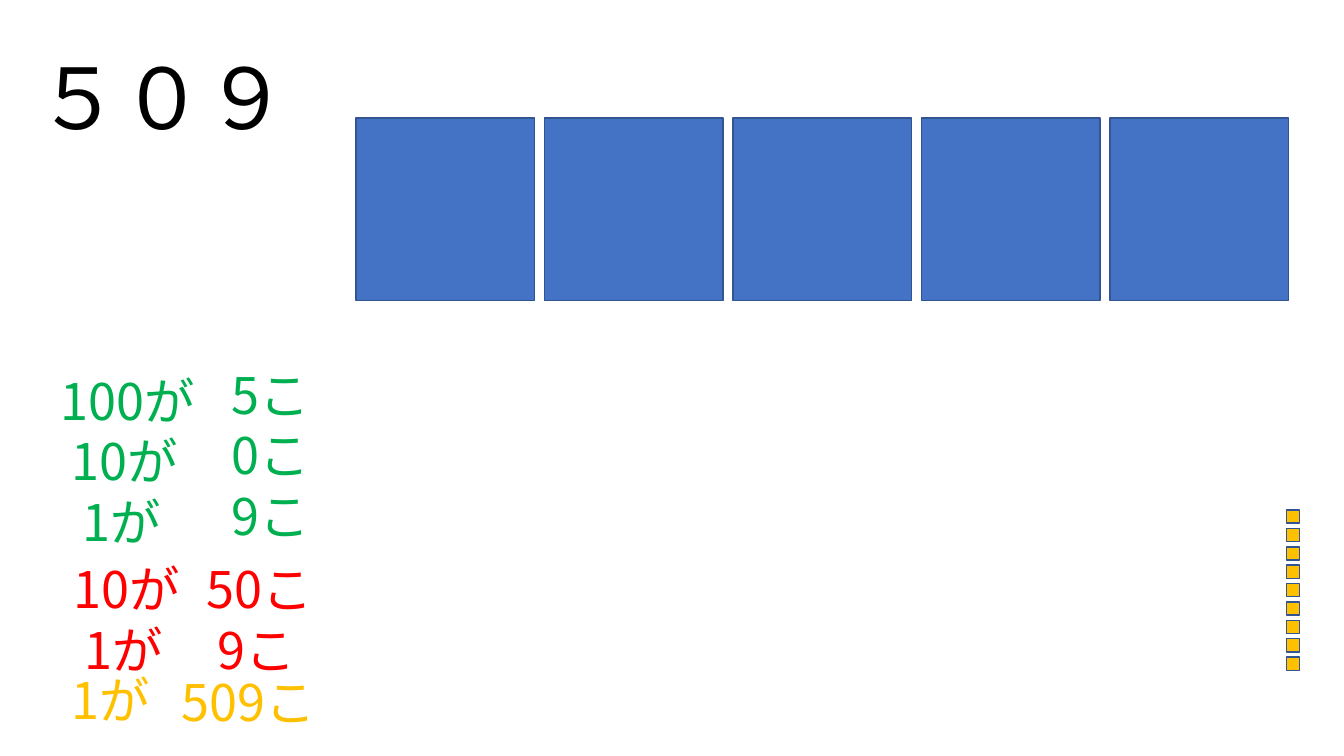
from dataclasses import dataclass

from lxml.etree import SubElement
from pptx import Presentation
from pptx.dml.color import RGBColor
from pptx.enum.shapes import MSO_SHAPE
from pptx.enum.text import MSO_ANCHOR, MSO_AUTO_SIZE, PP_ALIGN
from pptx.oxml.ns import qn
from pptx.slide import Slide
from pptx.text.text import TextFrame
from pptx.util import Inches, Pt


@dataclass(frozen=True)
class Theme:
    font: str = "Noto Sans CJK JP"
    title_size: int = 60
    count_size: int = 36
    black: str = "000000"
    green: str = "00B050"
    red: str = "FF0000"
    gold: str = "FFC000"
    blue: str = "4472C4"
    outline: str = "325491"


@dataclass(frozen=True)
class Column:
    left: float
    top: float
    height: float
    color: str
    lines: tuple[str, ...]
    steps: tuple[int, ...]


@dataclass(frozen=True)
class Blocks:
    count: int
    left: float
    top: float
    width: float
    height: float
    across: float
    down: float
    color: str


THEME = Theme()
INDENT_STEP = 0.11
COLUMN_WIDTH = 2

COLUMNS = (
    Column(2.09, 3.56, 1.92, THEME.green, ("5こ", "0こ", "9こ"), (1, 1, 1)),
    Column(0.39, 3.62, 1.92, THEME.green, ("100が", "10が", "1が"), (1, 2, 3)),
    Column(0.41, 5.49, 1.31, THEME.red, ("10が", "1が"), (2, 3)),
    Column(1.84, 5.49, 1.31, THEME.red, ("50こ", "9こ"), (1, 2)),
    Column(0.39, 6.59, 0.71, THEME.gold, ("1が",), (2,)),
    Column(1.59, 6.61, 0.71, THEME.gold, ("509こ",), (1,)),
)

HUNDREDS = Blocks(5, 3.53, 1.17, 1.77, 1.81, 1.87, 0, THEME.blue)
ONES = Blocks(9, 12.76, 5.06, 0.13, 0.13, 0, 1.46 / 8, THEME.gold)


def format_text(frame: TextFrame, size: int, color: str) -> None:
    for paragraph in frame.paragraphs:
        paragraph.alignment = PP_ALIGN.LEFT
        for span in paragraph.runs:
            span.font.size = Pt(size)
            span.font.name = THEME.font
            span.font.color.rgb = RGBColor.from_string(color)
            east_asian = SubElement(span.font._element, qn("a:ea"))
            east_asian.set("typeface", THEME.font)


def add_number(page: Slide, number: str) -> None:
    title = page.shapes.title
    title.left, title.top = Inches(0.26), Inches(0.4)
    title.width, title.height = Inches(3.54), Inches(1.11)
    frame = title.text_frame
    frame.text = number
    frame.vertical_anchor = MSO_ANCHOR.TOP
    frame.auto_size = MSO_AUTO_SIZE.NONE
    format_text(frame, THEME.title_size, THEME.black)


def add_column(page: Slide, column: Column) -> None:
    box = page.shapes.add_textbox(
        Inches(column.left), Inches(column.top), Inches(COLUMN_WIDTH), Inches(column.height)
    )
    frame = box.text_frame
    frame.word_wrap = True
    frame.text = "\n".join(column.lines)
    format_text(frame, THEME.count_size, column.color)
    for paragraph, step in zip(frame.paragraphs, column.steps):
        properties = paragraph._p.get_or_add_pPr()
        properties.set("marL", str(Inches(step * INDENT_STEP)))
        properties.set("indent", "0")


def add_blocks(page: Slide, blocks: Blocks) -> None:
    for index in range(blocks.count):
        block = page.shapes.add_shape(
            MSO_SHAPE.RECTANGLE,
            Inches(blocks.left + index * blocks.across),
            Inches(blocks.top + index * blocks.down),
            Inches(blocks.width),
            Inches(blocks.height),
        )
        block.shadow.inherit = False
        block.fill.solid()
        block.fill.fore_color.rgb = RGBColor.from_string(blocks.color)
        block.line.color.rgb = RGBColor.from_string(THEME.outline)
        block.line.width = Pt(1)


def main() -> None:
    deck = Presentation()
    deck.slide_width, deck.slide_height = Inches(13.33), Inches(7.5)
    page = deck.slides.add_slide(deck.slide_layouts.get_by_name("Title Only"))
    add_number(page, "５０９")
    for blocks in (HUNDREDS, ONES):
        add_blocks(page, blocks)
    for column in COLUMNS:
        add_column(page, column)
    deck.save("out.pptx")


if __name__ == "__main__":
    main()
